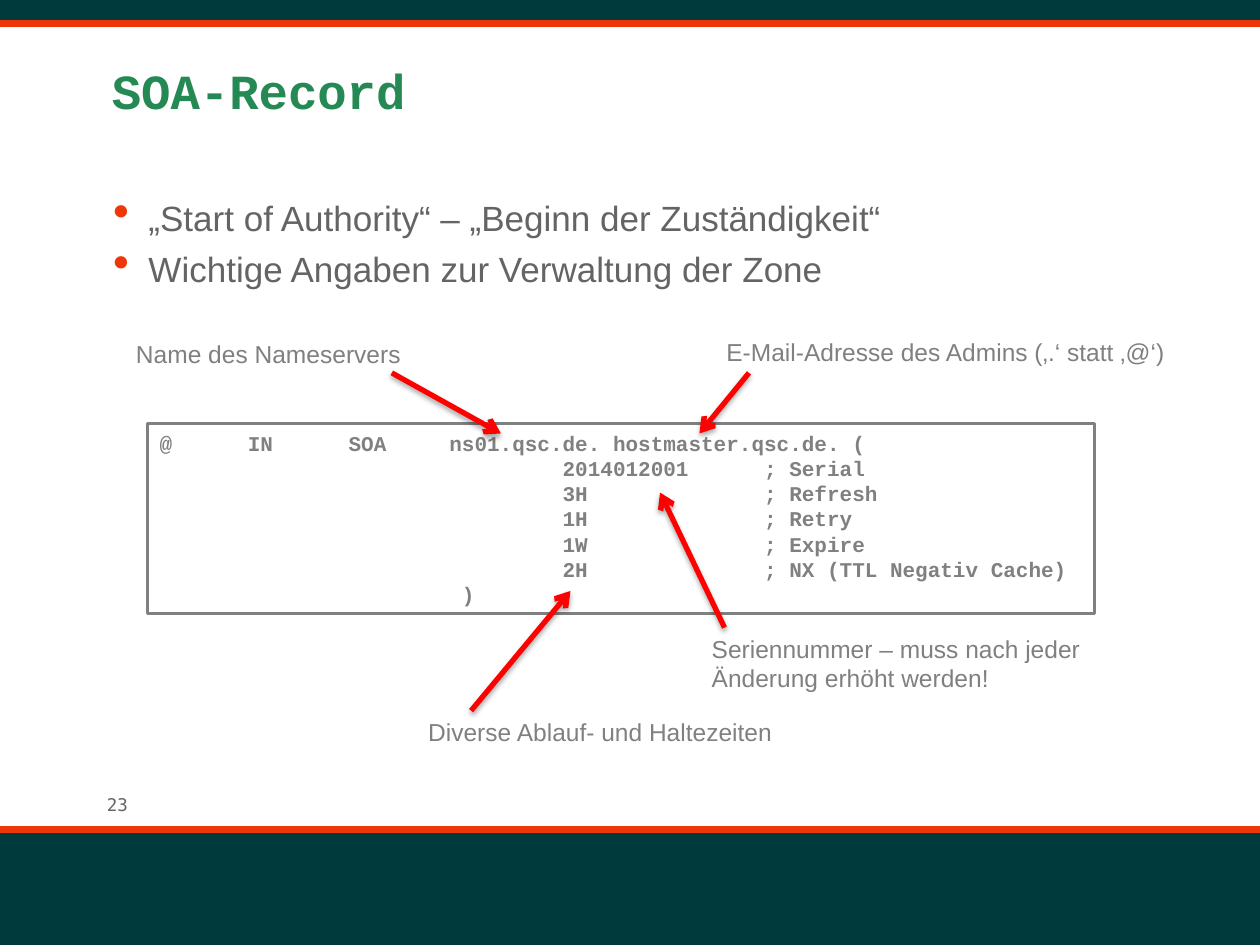
from dataclasses import dataclass

import lxml.etree
import pptx
import pptx.dml.color
import pptx.enum.shapes
import pptx.enum.text
import pptx.oxml
import pptx.oxml.ns
import pptx.util

Pt = pptx.util.Pt
qn = pptx.oxml.ns.qn


@dataclass(frozen=True)
class Theme:
    dark: str = "003A3D"
    accent: str = "EE3709"
    title: str = "258954"
    body: str = "646464"
    note: str = "808080"
    arrow: str = "FF0000"
    paper: str = "FFFFFF"
    sans: str = "Arial"
    mono: str = "Courier New"
    number: str = "DejaVu Sans Mono"
    title_size: float = 28
    body_size: float = 20
    note_size: float = 14
    code_size: float = 12
    number_size: float = 10


@dataclass(frozen=True)
class Box:
    left: float
    top: float
    width: float
    height: float

    def lengths(self) -> tuple:
        return Pt(self.left), Pt(self.top), Pt(self.width), Pt(self.height)


@dataclass(frozen=True)
class Style:
    font: str
    size: float
    color: str
    bold: bool = False


@dataclass(frozen=True)
class Note:
    text: str
    box: Box
    wrap: bool
    start: tuple[float, float]
    end: tuple[float, float]


THEME = Theme()
TITLE = Style(THEME.mono, THEME.title_size, THEME.title, True)
BODY = Style(THEME.sans, THEME.body_size, THEME.body)
NOTE = Style(THEME.sans, THEME.note_size, THEME.note)
CODE = Style(THEME.mono, THEME.code_size, THEME.note, True)
NUMBER = Style(THEME.number, THEME.number_size, THEME.body)

WIDTH, HEIGHT = 720, 540
BANDS = [(Box(0, 473.8, WIDTH, 66.2), 473.8), (Box(0, 0, WIDTH, 12.2), 13.7)]
BULLETS = [
    "„Start of Authority“ – „Beginn der Zuständigkeit“",
    "Wichtige Angaben zur Verwaltung der Zone",
]
RECORD = [
    "@      IN      SOA     ns01.qsc.de. hostmaster.qsc.de. (",
    "                                2014012001      ; Serial",
    "                                3H              ; Refresh",
    "                                1H              ; Retry",
    "                                1W              ; Expire",
    "                                2H              ; NX (TTL Negativ Cache)",
    "                        )",
]
NOTES = [
    Note("Name des Nameservers", Box(70.6, 190.1, 166.3, 24.5), False,
         (223.9, 213.1), (286.2, 247.7)),
    Note("E-Mail-Adresse des Admins (‚.‘ statt ‚@‘)", Box(408, 189.2, 265.7, 24.5), False,
         (428, 213.1), (399.7, 247.7)),
    Note("Seriennummer – muss nach jeder Änderung erhöht werden!",
         Box(399.6, 358.6, 226.8, 41), True, (414, 358.6), (377.2, 281.5)),
    Note("Diverse Ablauf- und Haltezeiten", Box(237.6, 406.1, 226.8, 24.5), True,
         (269.2, 406.1), (326, 337.7)),
]


def rgb(value: str) -> pptx.dml.color.RGBColor:
    return pptx.dml.color.RGBColor.from_string(value)


def write(tf, lines: list[str], style: Style, wrap: bool = True) -> None:
    tf.word_wrap = wrap
    for i, line in enumerate(lines):
        p = tf.paragraphs[0] if i == 0 else tf.add_paragraph()
        p.text = line
        p.alignment = pptx.enum.text.PP_ALIGN.LEFT
        p.font.name = style.font
        p.font.size = Pt(style.size)
        p.font.bold = style.bold
        p.font.color.rgb = rgb(style.color)


def add_text(slide, box: Box, lines: list[str], style: Style, wrap: bool = True):
    sp = slide.shapes.add_textbox(*box.lengths())
    write(sp.text_frame, lines, style, wrap)
    return sp


def add_rect(slide, box: Box, fill: str, line: str, weight: float):
    sp = slide.shapes.add_shape(pptx.enum.shapes.MSO_SHAPE.RECTANGLE, *box.lengths())
    sp.shadow.inherit = False
    sp.fill.solid()
    sp.fill.fore_color.rgb = rgb(fill)
    sp.line.color.rgb = rgb(line)
    sp.line.width = Pt(weight)
    return sp


def add_line(slide, start: tuple, end: tuple, color: str, weight: float):
    ends = [Pt(v) for v in (*start, *end)]
    line = slide.shapes.add_connector(pptx.enum.shapes.MSO_CONNECTOR.STRAIGHT, *ends)
    line.line.color.rgb = rgb(color)
    line.line.width = Pt(weight)
    effects = lxml.etree.SubElement(line._element.spPr, qn("a:effectLst"))
    return line, effects


def add_arrow(slide, start: tuple, end: tuple) -> None:
    line, effects = add_line(slide, start, end, THEME.arrow, 3)
    ln = line.line._get_or_add_ln()
    lxml.etree.SubElement(ln, qn("a:tailEnd"), type="arrow")
    shadow = lxml.etree.SubElement(
        effects, qn("a:outerShdw"), blurRad=str(Pt(3.1)), dist=str(Pt(1.8)),
        dir="5400000", rotWithShape="0")
    color = lxml.etree.SubElement(shadow, qn("a:srgbClr"), val="000000")
    lxml.etree.SubElement(color, qn("a:alpha"), val="35000")


def add_bullets(slide, box: Box, lines: list[str]) -> None:
    sp = slide.shapes.add_textbox(*box.lengths())
    write(sp.text_frame, lines, BODY)
    for i, p in enumerate(sp.text_frame.paragraphs):
        if i:
            p.space_before = Pt(5)
        pPr = p._p.get_or_add_pPr()
        pPr.set("marL", str(Pt(20.9)))
        pPr.set("indent", str(Pt(-20.2)))
        color = lxml.etree.Element(qn("a:buClr"))
        lxml.etree.SubElement(color, qn("a:srgbClr"), val=THEME.accent)
        size = lxml.etree.Element(qn("a:buSzPct"), val="135000")
        char = lxml.etree.Element(qn("a:buChar"), char="•")
        defaults = pPr.find(qn("a:defRPr"))
        for element in (color, size, char):
            defaults.addprevious(element)


def main() -> None:
    prs = pptx.Presentation()
    prs.slide_width, prs.slide_height = Pt(WIDTH), Pt(HEIGHT)
    slide = prs.slides.add_slide(prs.slide_layouts[6])

    add_text(slide, Box(54, 450, 210.2, 19.4), ["23"], NUMBER)
    for band, y in BANDS:
        add_rect(slide, band, THEME.dark, THEME.dark, 0.75)
        add_line(slide, (0, y), (WIDTH, y), THEME.accent, 4)

    add_text(slide, Box(56.9, 31, 612, 71.3), ["SOA-Record"], TITLE)
    add_bullets(slide, Box(56.9, 108.7, 612, 341.3), BULLETS)

    record = add_rect(slide, Box(84.2, 241.9, 541.4, 108.7), THEME.paper, THEME.note, 2)
    write(record.text_frame, RECORD, CODE, wrap=False)

    for note in NOTES:
        add_arrow(slide, note.start, note.end)
        add_text(slide, note.box, [note.text], NOTE, note.wrap)

    prs.save("out.pptx")


if __name__ == "__main__":
    main()
